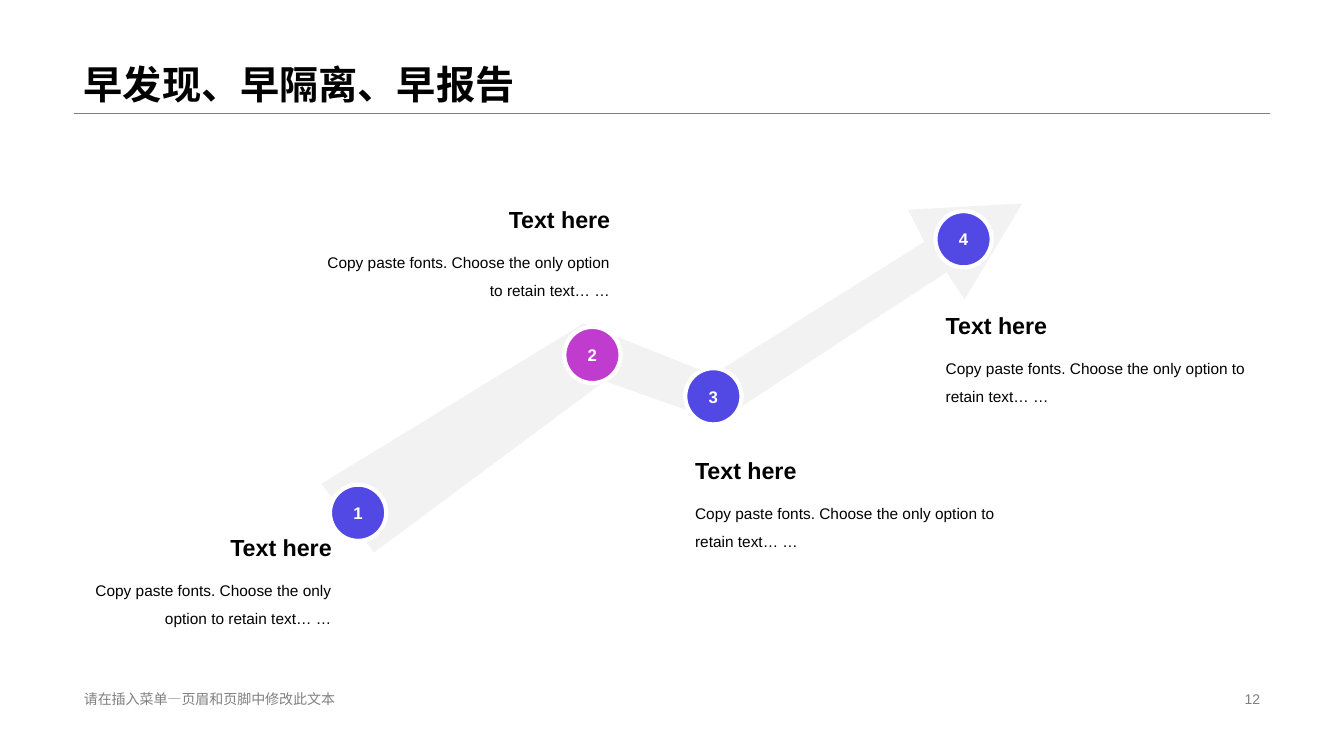
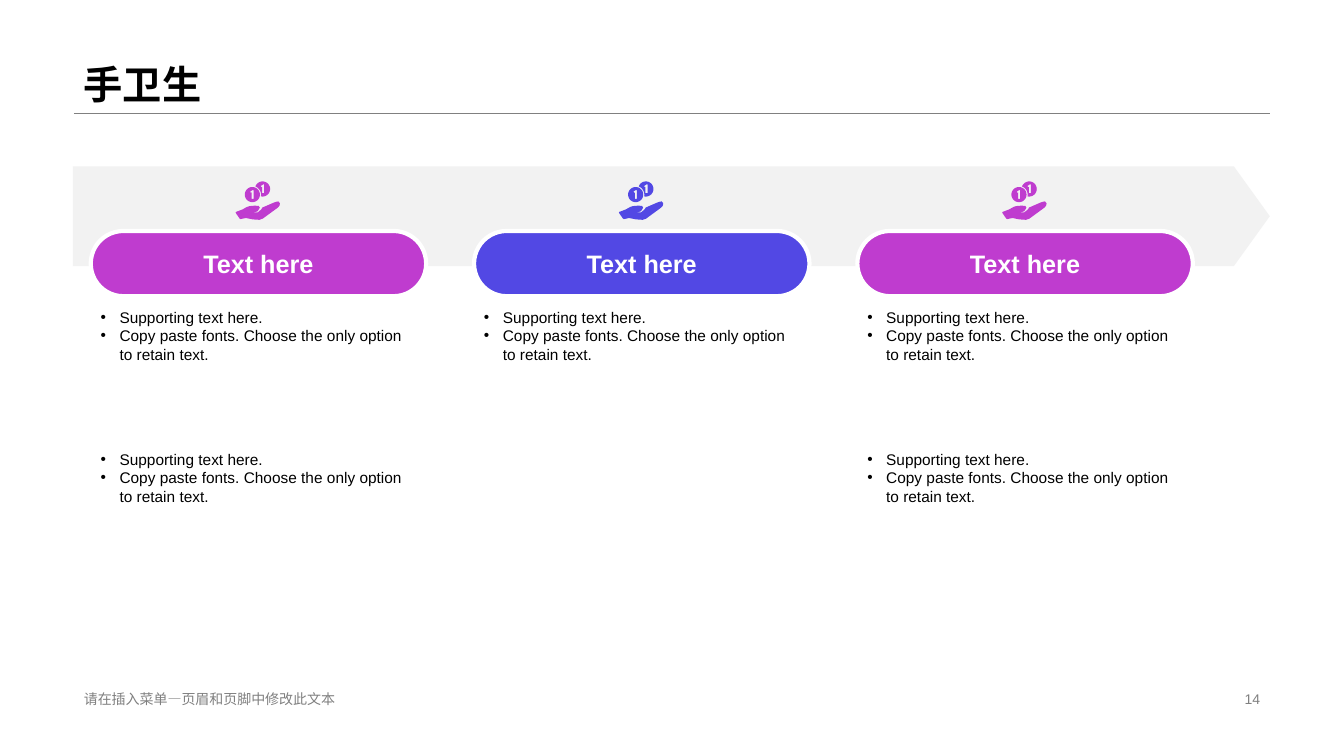
from dataclasses import dataclass
from math import cos, dist, pi, sin

from lxml.etree import SubElement
from pptx import Presentation
from pptx.dml.color import RGBColor
from pptx.enum.shapes import MSO_CONNECTOR, MSO_SHAPE
from pptx.enum.text import MSO_ANCHOR, PP_ALIGN
from pptx.oxml.ns import qn
from pptx.shapes.autoshape import Shape
from pptx.slide import Slide
from pptx.text.text import TextFrame
from pptx.util import Pt

COLORS = {
    "ink": "000000",
    "paper": "FFFFFF",
    "muted": "808080",
    "band": "F2F2F2",
    "indigo": "5248E4",
    "magenta": "BF3CCF",
}
FONT = "Arial"
MARGIN, CONTENT_WIDTH = 52.8, 854.4
TITLE_BASE = 80.7
FOOTER = "请在插入菜单—页眉和页脚中修改此文本"
HEADING = "Text here"

Point = tuple[float, float]
Box = tuple[float, float, float, float]


@dataclass
class Style:
    size: float
    color: str = "ink"
    bold: bool = False
    align: PP_ALIGN = PP_ALIGN.LEFT
    spacing: float = 1.0


@dataclass
class Milestone:
    badge: Point
    color: str
    caption: Point
    width: float
    align: PP_ALIGN = PP_ALIGN.LEFT


@dataclass
class Stage:
    color: str
    list_tops: tuple[float, ...]


BADGE = 40.2
GROWTH = "Copy paste fonts. Choose the only option to retain text… …"
GROWTH_ARROW = [
    (229.7, 345.6), (416.9, 231.1), (509, 267.8), (660.2, 172.8),
    (648.7, 149.8), (730.1, 145.4), (689, 213.8), (676.1, 194.4),
    (513.4, 301), (432, 272.2), (267.1, 394.6),
]
MILESTONES = [
    Milestone((235.7, 346.2), "indigo", (51.8, 377.4), 192.2, PP_ALIGN.RIGHT),
    Milestone((403.1, 233.5), "magenta", (218.9, 143.1), 224, PP_ALIGN.RIGHT),
    Milestone((489.5, 263), "indigo", (489.4, 322.3), 238.3),
    Milestone((668.2, 150.8), "indigo", (668.4, 218.7), 238.3),
]

STAGE_LEFT, STAGE_STEP, STAGE_WIDTH = 64.8, 273.8, 239.6
UPPER_LIST, LOWER_LIST = 216.4, 317.8
SUPPORT = ["Supporting text here.",
           "Copy paste fonts. Choose the only option to retain text."]
STAGES = [
    Stage("magenta", (UPPER_LIST, LOWER_LIST)),
    Stage("indigo", (UPPER_LIST,)),
    Stage("magenta", (UPPER_LIST, LOWER_LIST)),
]

COIN_RADIUS, COIN_GAP = 5.4, 6.2
FRONT_COIN, BACK_COIN = (12, 9.4), (19.3, 5.4)
HAND = [
    (29.5, 14.4), (30.6, 14.3), (31.7, 15.6), (31.4, 17.3), (30.2, 18.7),
    (19.4, 26.6), (17, 27.4), (12.2, 27.1), (7.4, 26.1), (3.6, 26.9),
    (2.9, 26.5), (0.4, 22.9), (0, 21.9), (5, 20), (8, 18.3), (10, 17.6),
    (13.7, 17.3), (16.6, 17.5), (17.3, 18.8), (15.8, 21.3), (12.2, 22.4),
    (16, 22), (18.6, 19.8), (19.1, 18.7), (27.4, 15.1),
]
DIGIT_ONE = [(-1.5, -2.2), (0, -3.2), (0.9, -3.2), (0.9, 3),
             (-0.6, 3), (-0.6, -1.5), (-1.2, -1.2)]


def rgb(color: str) -> RGBColor:
    return RGBColor.from_string(COLORS[color])


def write(frame: TextFrame, lines: list[str], style: Style) -> None:
    frame.word_wrap = True
    for index, line in enumerate(lines):
        paragraph = frame.paragraphs[0] if index == 0 else frame.add_paragraph()
        paragraph.alignment = style.align
        paragraph.line_spacing = style.spacing
        run = paragraph.add_run()
        run.text = line
        run.font.name = FONT
        run.font.size = Pt(style.size)
        run.font.bold = style.bold
        run.font.color.rgb = rgb(style.color)


def add_text(slide: Slide, box: Box, lines: list[str], style: Style,
             anchor: MSO_ANCHOR = MSO_ANCHOR.TOP) -> TextFrame:
    frame = slide.shapes.add_textbox(*map(Pt, box)).text_frame
    frame.vertical_anchor = anchor
    write(frame, lines, style)
    return frame


def paint(shape: Shape, color: str, outlined: bool = False) -> None:
    shape.shadow.inherit = False
    shape.fill.solid()
    shape.fill.fore_color.rgb = rgb(color)
    if outlined:
        shape.line.color.rgb = rgb("paper")
        shape.line.width = Pt(3)
    else:
        shape.line.fill.background()


def add_label(slide: Slide, kind: MSO_SHAPE, box: Box, color: str,
              text: str, size: float) -> Shape:
    """Draw a white-edged shape with centred bold text."""
    shape = slide.shapes.add_shape(kind, *map(Pt, box))
    paint(shape, color, outlined=True)
    frame = shape.text_frame
    frame.margin_left = frame.margin_right = 0
    frame.margin_top = frame.margin_bottom = 0
    frame.vertical_anchor = MSO_ANCHOR.MIDDLE
    write(frame, [text], Style(size, "paper", True, PP_ALIGN.CENTER))
    return shape


def add_outline(slide: Slide, contours: list[list[Point]], color: str) -> None:
    """Draw closed contours as one shape; inner contours become holes."""
    pens = [[(Pt(x), Pt(y)) for x, y in contour] for contour in contours]
    builder = slide.shapes.build_freeform(*pens[0][0])
    for index, (start, *rest) in enumerate(pens):
        if index:
            builder.move_to(*start)
        builder.add_line_segments(rest, close=True)
    paint(builder.convert_to_shape(), color)


def add_bullets(frame: TextFrame) -> None:
    for paragraph in frame.paragraphs:
        properties = paragraph._p.get_or_add_pPr()
        properties.set("marL", str(Pt(13.5)))
        properties.set("indent", str(-Pt(13.5)))
        SubElement(properties, qn("a:buFont"), typeface=FONT)
        SubElement(properties, qn("a:buChar"), char="•")


def add_page(deck: Presentation, title: str, number: int) -> Slide:
    slide = deck.slides.add_slide(deck.slide_layouts[6])
    right = MARGIN + CONTENT_WIDTH
    rule = slide.shapes.add_connector(
        MSO_CONNECTOR.STRAIGHT, Pt(MARGIN), Pt(TITLE_BASE), Pt(right), Pt(TITLE_BASE))
    rule.line.color.rgb = rgb("muted")
    rule.line.width = Pt(0.25)
    SubElement(rule._element.spPr, qn("a:effectLst"))
    add_text(slide, (MARGIN, 0, CONTENT_WIDTH, TITLE_BASE), [title],
             Style(28, bold=True, spacing=0.9), MSO_ANCHOR.BOTTOM)
    add_text(slide, (MARGIN, 491, 326, 16.4), [FOOTER],
             Style(10, "muted"), MSO_ANCHOR.MIDDLE)
    add_text(slide, (right - 229, 491, 229, 16.4), [str(number)],
             Style(10, "muted", align=PP_ALIGN.RIGHT), MSO_ANCHOR.MIDDLE)
    return slide


def add_milestone(slide: Slide, number: int, item: Milestone) -> None:
    add_label(slide, MSO_SHAPE.OVAL, (*item.badge, BADGE, BADGE),
              item.color, str(number), 12)
    left, top = item.caption
    add_text(slide, (left, top, item.width, 27.6), [HEADING],
             Style(16.6, bold=True, align=item.align))
    add_text(slide, (left, top + 27.6, item.width, 60), [GROWTH],
             Style(11, align=item.align, spacing=1.5))


def shifted(points: list[Point], dx: float, dy: float) -> list[Point]:
    return [(x + dx, y + dy) for x, y in points]


def circle(center: Point) -> list[Point]:
    steps = 48
    ring = [(COIN_RADIUS * cos(2 * pi * i / steps),
             COIN_RADIUS * sin(2 * pi * i / steps)) for i in range(steps)]
    return shifted(ring, *center)


def clear_of_front(point: Point) -> Point:
    """Push a point out of the gap around the front coin."""
    scale = max(1, COIN_GAP / dist(point, FRONT_COIN))
    x, y = FRONT_COIN
    return x + (point[0] - x) * scale, y + (point[1] - y) * scale


def add_coins_in_hand(slide: Slide, left: float, top: float, color: str) -> None:
    contours = [
        HAND,
        circle(FRONT_COIN),
        shifted(DIGIT_ONE, *FRONT_COIN),
        [clear_of_front(point) for point in circle(BACK_COIN)],
        shifted(DIGIT_ONE, BACK_COIN[0] + 0.3, BACK_COIN[1]),
    ]
    add_outline(slide, [shifted(contour, left, top) for contour in contours], color)


def add_stage(slide: Slide, left: float, stage: Stage) -> None:
    for top in stage.list_tops:
        add_bullets(add_text(slide, (left, top, STAGE_WIDTH, 82), SUPPORT, Style(11)))
    pill = add_label(slide, MSO_SHAPE.ROUNDED_RECTANGLE,
                     (left, 165, STAGE_WIDTH, 46.6), stage.color, HEADING, 18)
    pill.adjustments[0] = 0.5
    add_coins_in_hand(slide, left + 103.5, 129.6, stage.color)


def main() -> None:
    deck = Presentation()
    deck.slide_width, deck.slide_height = Pt(960), Pt(540)

    growth = add_page(deck, "早发现、早隔离、早报告", 12)
    add_outline(growth, [GROWTH_ARROW], "band")
    for number, milestone in enumerate(MILESTONES, 1):
        add_milestone(growth, number, milestone)

    hygiene = add_page(deck, "手卫生", 14)
    band = hygiene.shapes.add_shape(
        MSO_SHAPE.PENTAGON, Pt(52), Pt(118.8), Pt(855), Pt(71.3))
    band.adjustments[0] = 0.36
    paint(band, "band")
    for column, stage in enumerate(STAGES):
        add_stage(hygiene, STAGE_LEFT + column * STAGE_STEP, stage)

    deck.save("out.pptx")


if __name__ == "__main__":
    main()
